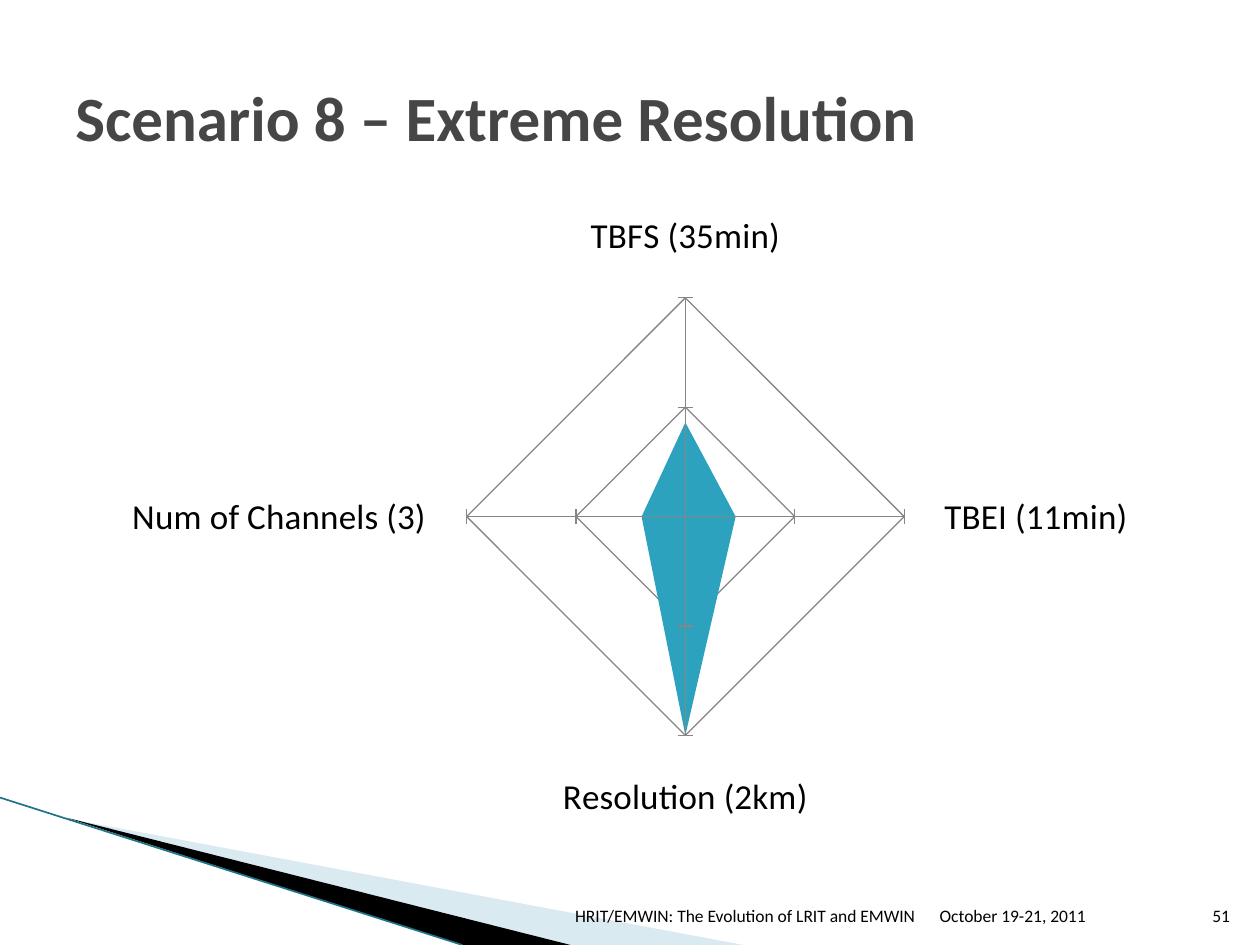
from typing import NamedTuple

from lxml import etree
from pptx import Presentation
from pptx import util as u
from pptx.chart import data as cd
from pptx.dml.color import RGBColor
from pptx.enum import chart as ch, text as t
from pptx.oxml.ns import qn

WIDTH, HEIGHT = 10, 7.5
FONT = "Calibri"
COLORS = {
    "ink": "000000", "title": "464646", "pale": "A0CBDC",
    "edge": "1F7488", "grid": "868686", "area": "2DA2BF",
}
SCORES = {
    "TBFS (35min)": 43,
    "TBEI (11min)": 23,
    "Resolution (2km)": 100,
    "Num of Channels (3)": 20,
}


class Wedge(NamedTuple):
    points: list[tuple[float, float]]
    color: str
    opacity: int


class Label(NamedTuple):
    text: str
    box: tuple[float, float, float, float]
    size: int = 10
    color: str = "ink"
    bold: bool = False
    align: t.PP_ALIGN = t.PP_ALIGN.LEFT
    anchor: t.MSO_ANCHOR = t.MSO_ANCHOR.BOTTOM


FOOTER_TOP, FOOTER_HEIGHT = 7, 0.4
WEDGES = [
    Wedge([(0.55, 6.5), (5.9, HEIGHT), (4.53, HEIGHT)], "pale", 40),
    Wedge([(0.53, 6.49), (4.53, HEIGHT), (3.67, HEIGHT)], "ink", 100),
]
LABELS = [
    Label("October 19-21, 2011", (7.36, FOOTER_TOP, 2.1, FOOTER_HEIGHT)),
    Label("HRIT/EMWIN: The Evolution of LRIT and EMWIN",
          (4, FOOTER_TOP, 3.36, FOOTER_HEIGHT), align=t.PP_ALIGN.RIGHT),
    Label("51", (9.46, FOOTER_TOP, 0.4, FOOTER_HEIGHT), align=t.PP_ALIGN.RIGHT),
    Label("Scenario 8 – Extreme Resolution", (0.5, 0.3, 8.25, 1.25), 36,
          "title", True, anchor=t.MSO_ANCHOR.MIDDLE),
]


def rgb(name: str) -> RGBColor:
    return RGBColor.from_string(COLORS[name])


def draw_wedge(slide, wedge: Wedge) -> None:
    start, *others = [(u.Inches(x), u.Inches(y)) for x, y in wedge.points]
    builder = slide.shapes.build_freeform(*start)
    builder.add_line_segments(others, close=True)
    shape = builder.convert_to_shape()
    shape.shadow.inherit = False
    shape.fill.solid()
    shape.fill.fore_color.rgb = rgb(wedge.color)
    shape.line.fill.background()
    if wedge.opacity < 100:
        color = shape.fill._xPr.find(qn("a:solidFill"))[0]
        etree.SubElement(color, qn("a:alpha"), val=str(wedge.opacity * 1000))


def draw_edge(slide) -> None:
    ends = [u.Inches(v) for v in (0, 6.33, 3.67, HEIGHT)]
    edge = slide.shapes.add_connector(1, *ends)
    edge.line.color.rgb = rgb("edge")
    edge.line.width = u.Pt(0.95)
    etree.SubElement(edge._element.spPr, qn("a:effectLst"))


def draw_label(slide, label: Label) -> None:
    frame = slide.shapes.add_textbox(*map(u.Inches, label.box)).text_frame
    frame.word_wrap = True
    frame.vertical_anchor = label.anchor
    paragraph = frame.paragraphs[0]
    paragraph.alignment = label.align
    run = paragraph.add_run()
    run.text = label.text
    run.font.name = FONT
    run.font.size = u.Pt(label.size)
    run.font.bold = label.bold
    run.font.color.rgb = rgb(label.color)


def draw_radar(slide) -> None:
    scores = cd.CategoryChartData(number_format="0")
    scores.categories = list(SCORES)
    scores.add_series("Series 1", list(SCORES.values()))
    radar = slide.shapes.add_chart(
        ch.XL_CHART_TYPE.RADAR_FILLED,
        *map(u.Inches, (0.5, 1.6, 9, 5)), scores).chart
    radar.has_legend = False
    radar.has_title = False
    radar.font.name = FONT
    radar.font.size = u.Pt(10)
    radar.font.color.rgb = rgb("ink")

    plot = radar.plots[0]
    plot.vary_by_categories = False
    area = plot.series[0].format
    area.fill.solid()
    area.fill.fore_color.rgb = rgb("area")
    area.line.fill.background()

    for axis in (radar.category_axis, radar.value_axis):
        axis.has_major_gridlines = True
        axis.major_tick_mark = ch.XL_TICK_MARK.CROSS
        for line in (axis.format.line, axis.major_gridlines.format.line):
            line.color.rgb = rgb("grid")
            line.width = u.Pt(0.75)
    names = radar.category_axis.tick_labels.font
    names.name = FONT
    names.size = u.Pt(20)
    names.color.rgb = rgb("ink")
    scale = radar.value_axis
    scale.minimum_scale, scale.maximum_scale, scale.major_unit = 0, 100, 50
    scale.tick_label_position = ch.XL_TICK_LABEL_POSITION.NONE


def main() -> None:
    deck = Presentation()
    deck.slide_width, deck.slide_height = u.Inches(WIDTH), u.Inches(HEIGHT)
    slide = deck.slides.add_slide(deck.slide_layouts[6])

    # Corner decoration
    for wedge in WEDGES:
        draw_wedge(slide, wedge)
    draw_edge(slide)

    # Scenario scores, then footer and title
    draw_radar(slide)
    for label in LABELS:
        draw_label(slide, label)

    deck.save("out.pptx")


if __name__ == "__main__":
    main()
